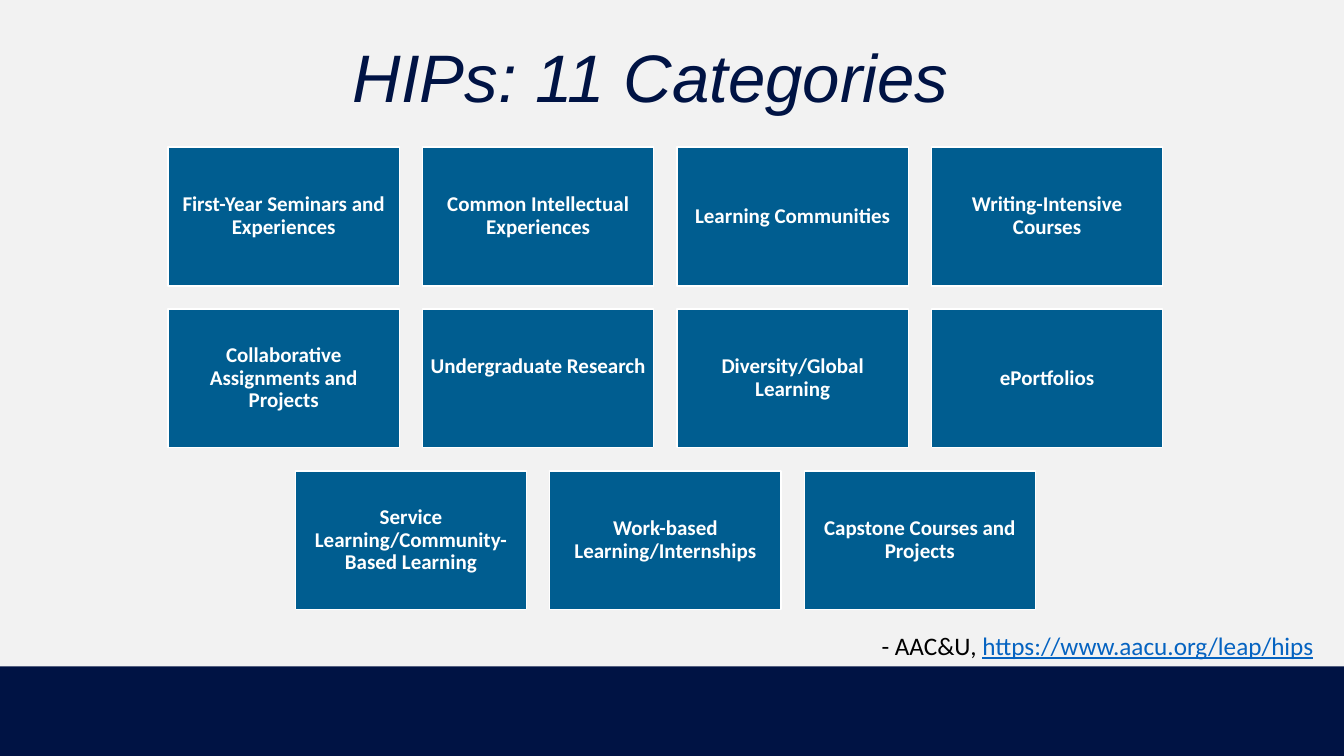
from dataclasses import dataclass

from pptx import Presentation
from pptx.dml.color import RGBColor
from pptx.enum.shapes import MSO_SHAPE as Shape
from pptx.enum.text import MSO_ANCHOR as Anchor, PP_ALIGN as Align
from pptx.util import Pt


@dataclass(frozen=True)
class Theme:
    background: RGBColor = RGBColor(0xF2, 0xF2, 0xF2)
    navy: RGBColor = RGBColor(0x00, 0x13, 0x44)
    tile: RGBColor = RGBColor(0x00, 0x5D, 0x90)
    white: RGBColor = RGBColor(0xFF, 0xFF, 0xFF)
    black: RGBColor = RGBColor(0x00, 0x00, 0x00)
    link: RGBColor = RGBColor(0x05, 0x63, 0xC1)
    title_font: str = "Arial"
    body_font: str = "Calibri"
    title_size: int = 48
    source_size: int = 18
    tile_size: int = 15


THEME = Theme()
SLIDE_WIDTH, SLIDE_HEIGHT = 960, 540

# Tile grid: each row is centred on the same axis
TILE_WIDTH, TILE_HEIGHT, TILE_GAP = 165.24, 99.15, 16.52
GRID_CENTER, GRID_TOP = 475.3, 105.1
TILE_INSET = 4.2
RAISED_LABEL = "Undergraduate Research"
RAISED_INSET = 20.4

CATEGORY_ROWS = [
    ["First-Year Seminars and Experiences", "Common Intellectual Experiences",
     "Learning Communities", "Writing-Intensive Courses"],
    ["Collaborative Assignments and Projects", RAISED_LABEL,
     "Diversity/Global Learning", "ePortfolios"],
    ["Service Learning/Community-Based Learning",
     "Work-based Learning/Internships", "Capstone Courses and Projects"],
]


def style_font(font, name, size, color):
    font.name = name
    font.size = Pt(size)
    font.color.rgb = color


def add_rectangle(slide, left, top, width, height, fill):
    shape = slide.shapes.add_shape(
        Shape.RECTANGLE, Pt(left), Pt(top), Pt(width), Pt(height))
    shape.shadow.inherit = False
    shape.fill.solid()
    shape.fill.fore_color.rgb = fill
    shape.line.fill.background()
    return shape


def add_text_box(slide, left, top, width, height):
    box = slide.shapes.add_textbox(Pt(left), Pt(top), Pt(width), Pt(height))
    box.text_frame.word_wrap = True
    return box.text_frame


def add_title(slide, text):
    frame = add_text_box(slide, 51, 5.8, 828, 104.4)
    frame.vertical_anchor = Anchor.MIDDLE
    frame.text = text
    paragraph = frame.paragraphs[0]
    paragraph.alignment = Align.CENTER
    paragraph.line_spacing = 0.9
    font = paragraph.runs[0].font
    style_font(font, THEME.title_font, THEME.title_size, THEME.navy)
    font.italic = True


def add_tile(slide, left, top, label):
    shape = add_rectangle(slide, left, top, TILE_WIDTH, TILE_HEIGHT, THEME.tile)
    shape.line.color.rgb = THEME.white
    shape.line.width = Pt(1)
    frame = shape.text_frame
    frame.word_wrap = True
    frame.vertical_anchor = Anchor.MIDDLE
    frame.margin_left = frame.margin_right = frame.margin_top = Pt(TILE_INSET)
    frame.margin_bottom = Pt(RAISED_INSET if label == RAISED_LABEL else TILE_INSET)
    frame.text = label
    paragraph = frame.paragraphs[0]
    paragraph.alignment = Align.CENTER
    paragraph.line_spacing = 0.9
    font = paragraph.runs[0].font
    style_font(font, THEME.body_font, THEME.tile_size, THEME.white)
    font.bold = True


def add_tile_grid(slide, rows):
    for row_index, labels in enumerate(rows):
        row_width = len(labels) * (TILE_WIDTH + TILE_GAP) - TILE_GAP
        row_left = GRID_CENTER - row_width / 2
        top = GRID_TOP + row_index * (TILE_HEIGHT + TILE_GAP)
        for column, label in enumerate(labels):
            add_tile(slide, row_left + column * (TILE_WIDTH + TILE_GAP), top, label)


def add_source(slide, lead, address):
    frame = add_text_box(slide, 465.1, 446.4, 480.2, 29)
    paragraph = frame.paragraphs[0]
    paragraph.alignment = Align.RIGHT
    for text, color in ((lead, THEME.black), (address, THEME.link)):
        run = paragraph.add_run()
        run.text = text
        style_font(run.font, THEME.body_font, THEME.source_size, color)
        run.font.underline = text == address


def main():
    presentation = Presentation()
    presentation.slide_width = Pt(SLIDE_WIDTH)
    presentation.slide_height = Pt(SLIDE_HEIGHT)
    slide = presentation.slides.add_slide(presentation.slide_layouts[6])

    # Background and footer band
    slide.background.fill.solid()
    slide.background.fill.fore_color.rgb = THEME.background
    add_rectangle(slide, 0, 476, SLIDE_WIDTH, SLIDE_HEIGHT - 476, THEME.navy)

    # Content
    add_title(slide, "HIPs: 11 Categories")
    add_tile_grid(slide, CATEGORY_ROWS)
    add_source(slide, "- AAC&U, ", "https://www.aacu.org/leap/hips")

    presentation.save("out.pptx")


if __name__ == "__main__":
    main()
